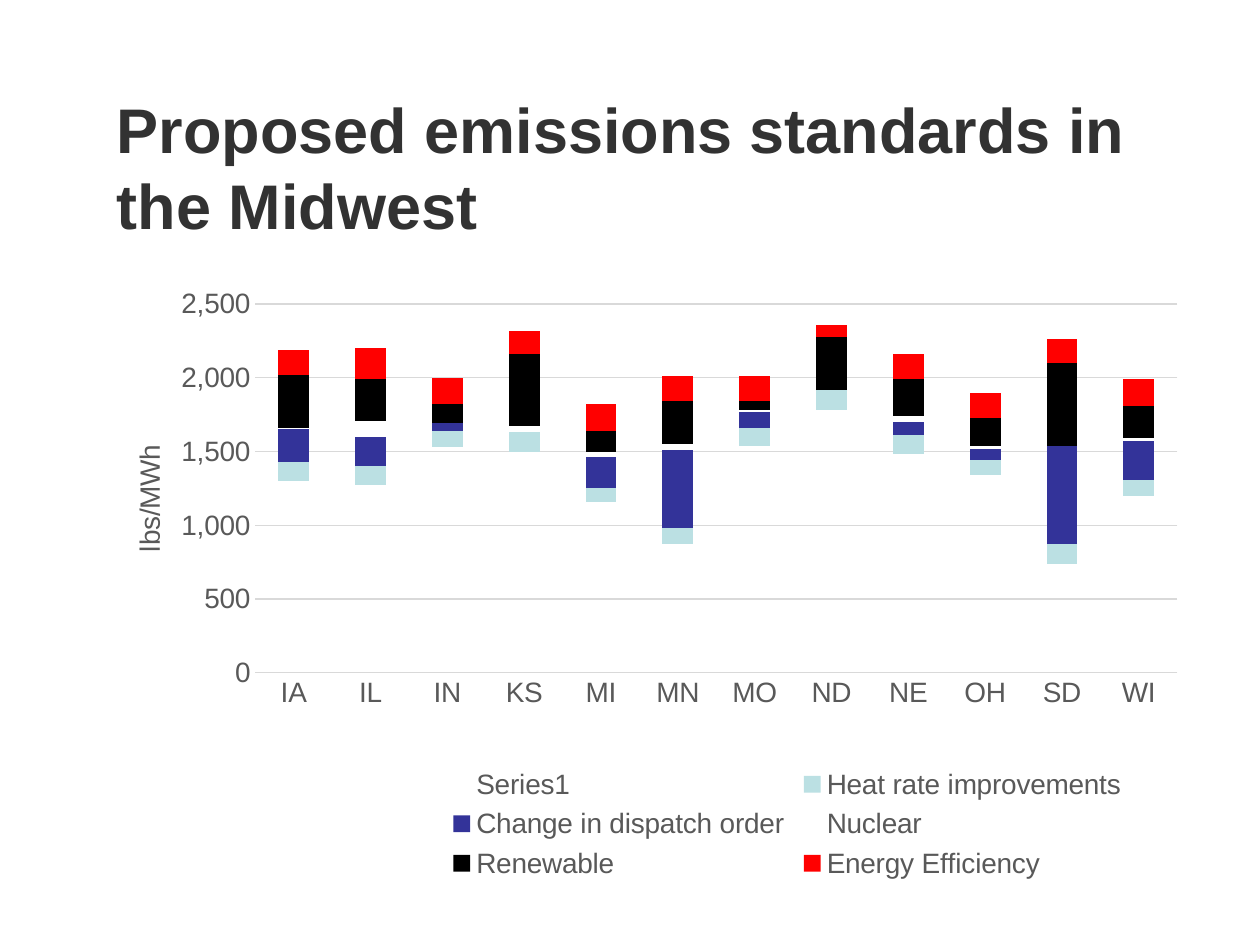
from lxml.etree import SubElement
from pptx import Presentation
from pptx.chart.data import CategoryChartData
from pptx.dml.color import RGBColor
from pptx.enum.chart import XL_CHART_TYPE, XL_LEGEND_POSITION, XL_TICK_MARK
from pptx.enum.text import MSO_ANCHOR
from pptx.oxml.ns import qn
from pptx.util import Inches, Pt

STATES = ["IA", "IL", "IN", "KS", "MI", "MN", "MO", "ND", "NE", "OH", "SD", "WI"]

# Name, colour (None = no fill), lbs/MWh per state
MEASURES = [
    ("Series1", None,
     [1300, 1270, 1530, 1500, 1160, 870, 1540, 1780, 1480, 1340, 740, 1200]),
    ("Heat rate improvements", "BBE0E3",
     [130, 130, 110, 130, 90, 110, 120, 140, 130, 100, 130, 110]),
    ("Change in dispatch order", "333399",
     [220, 200, 50, 0, 210, 530, 110, 0, 90, 80, 670, 260]),
    ("Nuclear", "FFFFFF", [10, 110, 0, 40, 40, 40, 10, 0, 40, 20, 0, 20]),
    ("Renewable", "000000",
     [360, 280, 130, 490, 140, 290, 60, 360, 250, 190, 560, 220]),
    ("Energy Efficiency", "FF0000",
     [170, 210, 180, 160, 180, 170, 170, 80, 170, 170, 160, 180]),
]


def color(hex_value):
    return RGBColor.from_string(hex_value)


def set_attributes(target, values):
    for name, value in values.items():
        setattr(target, name, value)


def set_layout(parent, index, inner=False, **fractions):
    """Place a chart part by fractions of the chart area."""
    for old in parent.findall(qn("c:layout")):
        parent.remove(old)
    layout = SubElement(parent, qn("c:layout"))
    parent.insert(index, layout)
    manual = SubElement(layout, qn("c:manualLayout"))
    settings = {"layoutTarget": "inner"} if inner else {}
    settings.update(xMode="edge", yMode="edge", **fractions)
    for tag, value in settings.items():
        SubElement(manual, qn("c:" + tag)).set("val", str(value))


class SlideBuilder:
    heading = {"name": "Arial", "size": Pt(36), "bold": True}
    label = {"name": "Arial", "size": Pt(16), "bold": False}
    heading_color, label_color, grid_color = "323232", "595959", "D9D9D9"

    def __init__(self, slide):
        self.slide = slide

    def style_font(self, font, values, hex_value):
        set_attributes(font, values)
        font.color.rgb = color(hex_value)

    def style_line(self, line):
        line.color.rgb = color(self.grid_color)
        line.width = Pt(0.75)

    def title(self, text, left, top, width, height):
        box = self.slide.shapes.add_textbox(
            Inches(left), Inches(top), Inches(width), Inches(height))
        frame = box.text_frame
        set_attributes(frame, {"word_wrap": True, "margin_bottom": 0,
                               "vertical_anchor": MSO_ANCHOR.BOTTOM})
        run = frame.paragraphs[0].add_run()
        run.text = text
        self.style_font(run.font, self.heading, self.heading_color)

    def stacked_chart(self, categories, measures, unit, left, top, width, height):
        data = CategoryChartData(number_format="#,##0")
        data.categories = categories
        for name, _, values in measures:
            data.add_series(name, values)
        chart = self.slide.shapes.add_chart(
            XL_CHART_TYPE.COLUMN_STACKED, Inches(left), Inches(top),
            Inches(width), Inches(height), data).chart
        chart.has_title = False
        self.style_font(chart.font, self.label, self.label_color)

        # Columns
        plot = chart.plots[0]
        set_attributes(plot, {"gap_width": 150, "overlap": 100,
                              "vary_by_categories": False})
        for series, (_, fill_color, _) in zip(plot.series, measures):
            fill = series.format.fill
            if fill_color:
                fill.solid()
                fill.fore_color.rgb = color(fill_color)
            else:
                fill.background()

        # Axes
        states, rates = chart.category_axis, chart.value_axis
        for axis in (states, rates):
            set_attributes(axis, {"major_tick_mark": XL_TICK_MARK.NONE,
                                  "minor_tick_mark": XL_TICK_MARK.NONE})
            self.style_font(axis.tick_labels.font, self.label, self.label_color)
        set_attributes(rates, {"minimum_scale": 0, "maximum_scale": 2500,
                               "major_unit": 500, "has_major_gridlines": True})
        set_attributes(rates.tick_labels, {"number_format": "#,##0",
                                           "number_format_is_linked": False})
        self.style_line(states.format.line)
        self.style_line(rates.major_gridlines.format.line)
        rates.format.line.fill.background()
        unit_run = rates.axis_title.text_frame.paragraphs[0].add_run()
        unit_run.text = unit
        self.style_font(unit_run.font, self.label, self.label_color)

        # Legend
        chart.has_legend = True
        set_attributes(chart.legend, {"position": XL_LEGEND_POSITION.BOTTOM,
                                      "include_in_layout": False})
        self.style_font(chart.legend.font, self.label, self.label_color)

        # Placement of the chart parts
        root = chart.element
        axis_title = root.xpath(".//c:valAx/c:title")[0]
        axis_title.xpath(".//a:bodyPr")[0].set("rot", "-5400000")
        set_layout(axis_title, 1, x=0.02, y=0.26)
        set_layout(root.xpath(".//c:plotArea")[0], 0, inner=True,
                   x=0.138, y=0.048, w=0.844, h=0.576)
        set_layout(root.xpath(".//c:legend")[0], 1, x=0.31, y=0.76, w=0.63, h=0.2)


def main():
    presentation = Presentation()
    set_attributes(presentation, {"slide_width": Inches(10),
                                  "slide_height": Inches(7.5)})
    builder = SlideBuilder(
        presentation.slides.add_slide(presentation.slide_layouts[6]))
    builder.title("Proposed emissions standards in the Midwest",
                  0.83, 0.67, 8.67, 1.25)
    builder.stacked_chart(STATES, MEASURES, "lbs/MWh", 0.83, 2.17, 8.67, 5.08)
    presentation.save("out.pptx")


if __name__ == "__main__":
    main()
